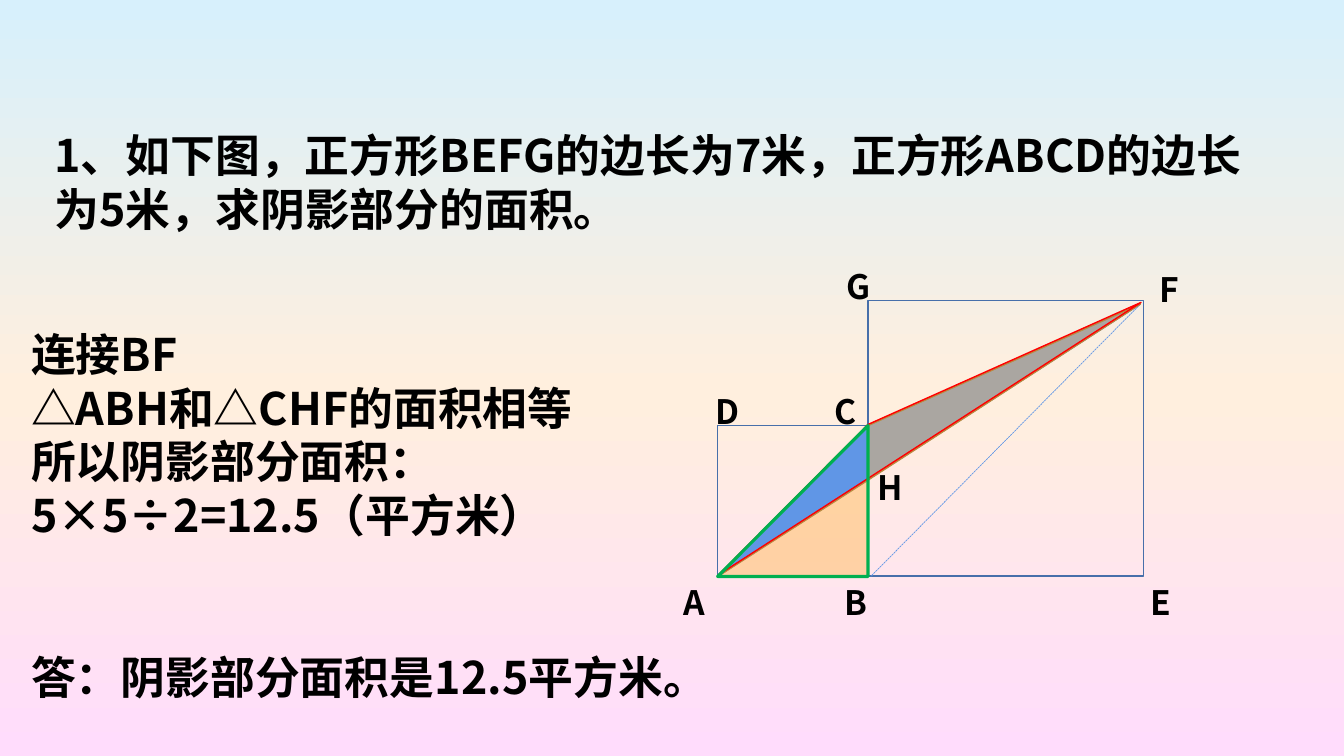
import copy
from typing import NamedTuple, Optional

import pptx
import pptx.dml.color
import pptx.enum.dml
import pptx.enum.shapes
import pptx.enum.text
import pptx.oxml
import pptx.oxml.ns
import pptx.util

Pt = pptx.util.Pt
FONT = "Noto Sans CJK SC"
COLORS = {
    "text": "000000", "square": "476FAA", "blue": "6096E6", "orange": "FFBA55",
    "brown": "BD8A3F", "red": "FF0000", "green": "00B050",
    "sky": "D7F0FC", "cream": "FFEFDE", "pink": "FFDCFC",
}


class Label(NamedTuple):
    text: str
    left: float
    top: float


class Square(NamedTuple):
    left: float
    top: float
    side: float


class Triangle(NamedTuple):
    corners: tuple
    line: str
    width: float = 1
    fill: Optional[str] = None
    alpha: int = 100


A, B, C = (512.6, 411.8), (620, 411.8), (620, 304)
F, H = (814.6, 217.2), (620, 343)

LABELS = [
    Label("A", 481, 411.8), Label("B", 596.2, 411.8), Label("C", 589, 275.8),
    Label("D", 504, 275.8), Label("E", 815, 411.8), Label("F", 820.8, 188.6),
    Label("G", 597.6, 186.5), Label("H", 620, 329.8),
]
SQUARES = [Square(512.6, 303.8, 108), Square(620, 214.6, 196.8)]
TRIANGLES = [
    Triangle((A, C, F), "square", fill="blue"),
    Triangle((A, H, B), "brown", fill="orange", alpha=47),
    Triangle((C, F, H), "brown", fill="orange", alpha=47),
    Triangle(((513.2, 410.6), (620, 303.2), (815, 216)), "red"),
    Triangle((A, C, B), "green", 2.25),
]
QUESTION = ["1、如下图，正方形BEFG的边长为7米，正方形ABCD的边长为5米，求阴影部分的面积。"]
SOLUTION = [
    "连接BF",
    "△ABH和△CHF的面积相等",
    "所以阴影部分面积：5×5÷2=12.5（平方米）",
    "答：阴影部分面积是12.5平方米。",
]


def rgb(name: str) -> pptx.dml.color.RGBColor:
    return pptx.dml.color.RGBColor.from_string(COLORS[name])


def paint_background(slide) -> None:
    """Fill the slide with a three-colour gradient running downwards."""
    fill = slide.background.fill
    fill.gradient()
    fill.gradient_angle = 270
    stop_list = slide.background._cSld.find(".//" + pptx.oxml.ns.qn("a:gsLst"))
    stop_list.insert(1, copy.deepcopy(stop_list[0]))
    stops = zip(fill.gradient_stops, ("sky", "cream", "pink"), (0, 0.52, 1))
    for stop, color, position in stops:
        stop.color.rgb = rgb(color)
        stop.position = position


def write_text(shape, lines: list, size: float) -> None:
    frame = shape.text_frame
    frame_format = {
        "word_wrap": True,
        "vertical_anchor": pptx.enum.text.MSO_ANCHOR.TOP,
        "auto_size": pptx.enum.text.MSO_AUTO_SIZE.SHAPE_TO_FIT_TEXT,
    }
    for name, value in frame_format.items():
        setattr(frame, name, value)
    for index, line in enumerate(lines):
        paragraph = frame.paragraphs[0] if index == 0 else frame.add_paragraph()
        paragraph.alignment = pptx.enum.text.PP_ALIGN.LEFT
        run = paragraph.add_run()
        run.text = line
        for name, value in {"size": Pt(size), "bold": True, "name": FONT}.items():
            setattr(run.font, name, value)
        run.font.color.rgb = rgb("text")
        east_asian = pptx.oxml.parse_xml(
            f'<a:ea {pptx.oxml.ns.nsdecls("a")} typeface="{FONT}"/>')
        run.font._element.append(east_asian)


def add_text(slide, lines: list, size: float, box: tuple):
    shape = slide.shapes.add_textbox(*map(Pt, box))
    write_text(shape, lines, size)
    return shape


def style_outline(shape, color: str, width: float) -> None:
    shape.shadow.inherit = False
    shape.line.color.rgb = rgb(color)
    shape.line.width = Pt(width)


def add_square(slide, square: Square) -> None:
    shape = slide.shapes.add_shape(
        pptx.enum.shapes.MSO_SHAPE.RECTANGLE,
        Pt(square.left), Pt(square.top), Pt(square.side), Pt(square.side))
    shape.fill.background()
    style_outline(shape, "square", 1)


def add_triangle(slide, triangle: Triangle) -> None:
    corners = [(Pt(x), Pt(y)) for x, y in triangle.corners]
    builder = slide.shapes.build_freeform(*corners[0])
    builder.add_line_segments(corners[1:], close=True)
    shape = builder.convert_to_shape()
    style_outline(shape, triangle.line, triangle.width)
    if triangle.fill is None:
        shape.fill.background()
        return
    shape.fill.solid()
    shape.fill.fore_color.rgb = rgb(triangle.fill)
    if triangle.alpha < 100:
        color = shape._element.spPr.find(".//" + pptx.oxml.ns.qn("a:srgbClr"))
        color.append(pptx.oxml.parse_xml(
            f'<a:alpha {pptx.oxml.ns.nsdecls("a")} val="{triangle.alpha * 1000}"/>'))


def add_diagonal(slide) -> None:
    """Draw the dashed helper line from F to B."""
    line = slide.shapes.add_connector(
        pptx.enum.shapes.MSO_CONNECTOR.STRAIGHT, Pt(F[0]), Pt(F[1]), Pt(622), Pt(B[1]))
    line.line.color.rgb = rgb("blue")
    line.line.width = Pt(0.5)
    line.line.dash_style = pptx.enum.dml.MSO_LINE.SQUARE_DOT
    line._element.spPr.append(pptx.oxml.parse_xml(
        f'<a:effectLst {pptx.oxml.ns.nsdecls("a")}/>'))


def main() -> None:
    presentation = pptx.Presentation()
    presentation.slide_width, presentation.slide_height = Pt(960), Pt(540)
    slide = presentation.slides.add_slide(presentation.slide_layouts[5])
    paint_background(slide)

    title = slide.shapes.title
    title_box = {"left": 31.7, "top": 87.8, "width": 890.6, "height": 123.8}
    for name, value in title_box.items():
        setattr(title, name, Pt(value))
    write_text(title, QUESTION, 32)

    for square in SQUARES:
        add_square(slide, square)
    add_triangle(slide, TRIANGLES[0])
    add_diagonal(slide)
    for triangle in TRIANGLES[1:]:
        add_triangle(slide, triangle)
    for label in LABELS:
        add_text(slide, [label.text], 24, (label.left, label.top, 46.8, 36))

    solution = add_text(slide, SOLUTION, 32, (15.1, 229.7, 483.8, 278.6))
    solution.text_frame.paragraphs[-1].space_before = Pt(77)
    presentation.save("out.pptx")


if __name__ == "__main__":
    main()
